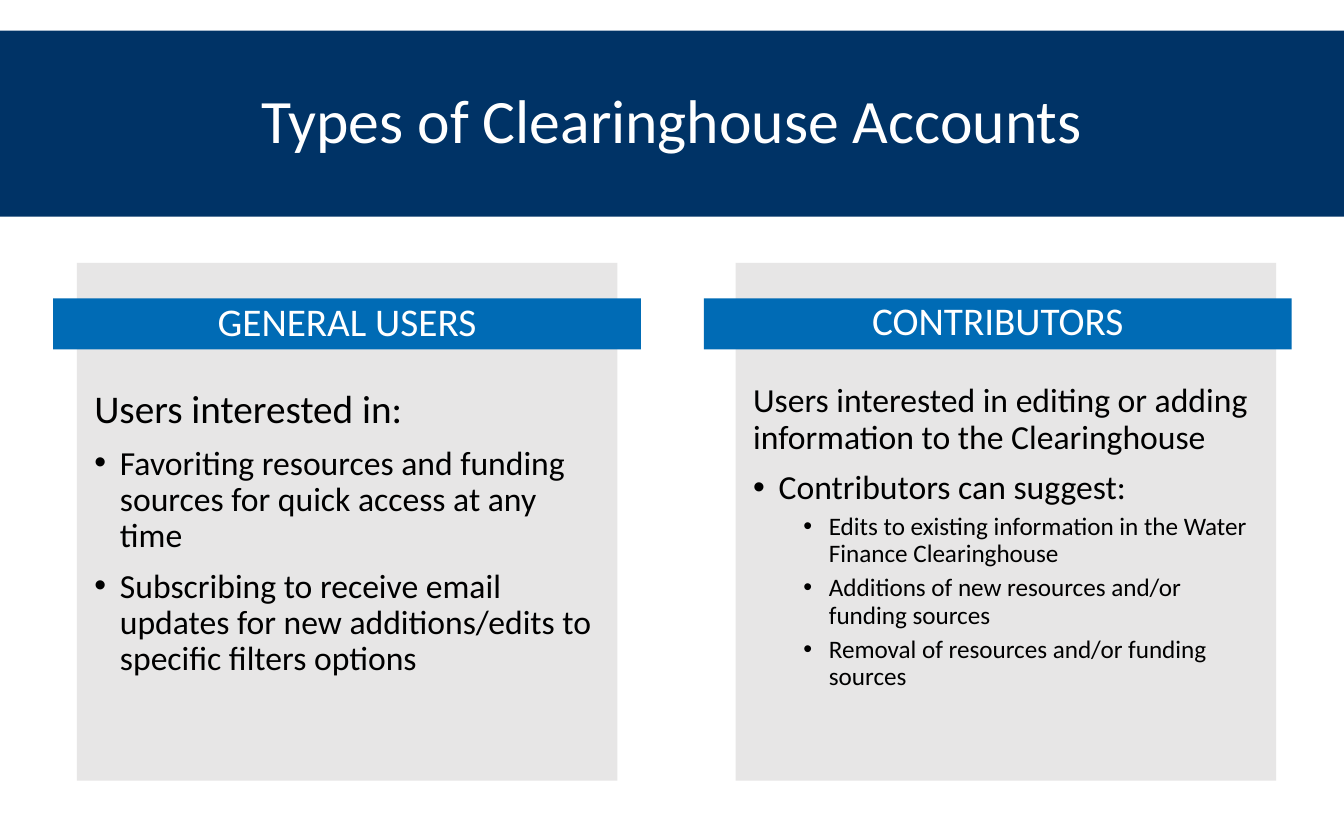
import pptx
import pptx.util
import pptx.dml.color
import pptx.enum.shapes
import pptx.enum.text
import lxml.etree

Inches = pptx.util.Inches
Pt = pptx.util.Pt
RGB = pptx.dml.color.RGBColor
ALIGN = pptx.enum.text.PP_ALIGN
ANCHOR = pptx.enum.text.MSO_ANCHOR

NAVY = RGB(0x00, 0x33, 0x66)
BLUE = RGB(0x00, 0x6B, 0xB5)
GREY = RGB(0xE7, 0xE6, 0xE6)
WHITE = RGB(0xFF, 0xFF, 0xFF)
BLACK = RGB(0x00, 0x00, 0x00)
FONT = "Calibri"
LARGE, MEDIUM, SMALL = 28.7, 24.6, 18.4
HANG = 0.26

USERS = [
    ("Users interested in:", LARGE, None),
    ("Favoriting resources and funding sources for quick access at any time", MEDIUM, 0),
    ("Subscribing to receive email updates for new additions/edits to specific filters options",
     MEDIUM, 0),
]
EDITORS = [
    ("Users interested in editing or adding information to the Clearinghouse", MEDIUM, None),
    ("Contributors can suggest:", MEDIUM, 0),
    ("Edits to existing information in the Water Finance Clearinghouse", SMALL, 1),
    ("Additions of new resources and/or funding sources", SMALL, 1),
    ("Removal of resources and/or funding sources", SMALL, 1),
]


def style(para, size, color, spacing=0.9):
    para.line_spacing = spacing
    for run in para.runs:
        run.font.name = FONT
        run.font.size = Pt(size)
        run.font.color.rgb = color


def label(shape, text, size, spacing=0.9):
    frame = shape.text_frame
    frame.text = text
    frame.word_wrap = True
    frame.auto_size = pptx.enum.text.MSO_AUTO_SIZE.NONE
    frame.vertical_anchor = ANCHOR.MIDDLE
    para = frame.paragraphs[0]
    para.alignment = ALIGN.CENTER
    style(para, size, WHITE, spacing)


def add_title(slide, text):
    title = slide.shapes.title
    title.left, title.top = Inches(0), Inches(0.31)
    title.width, title.height = Inches(13.65), Inches(1.89)
    title.fill.solid()
    title.fill.fore_color.rgb = NAVY
    label(title, text, 45.1)


def add_box(slide, left, top, width, height, color):
    box = slide.shapes.add_shape(
        pptx.enum.shapes.MSO_SHAPE.RECTANGLE,
        Inches(left), Inches(top), Inches(width), Inches(height))
    box.shadow.inherit = False
    box.fill.solid()
    box.fill.fore_color.rgb = color
    box.line.fill.background()
    return box


def add_bullet(para, level):
    para.level = level
    props = para._p.get_or_add_pPr()
    props.set("marL", str(Inches(HANG + 0.51 * level)))
    props.set("indent", str(-Inches(HANG)))
    space = pptx.oxml.ns.qn
    lxml.etree.SubElement(props, space("a:buFont")).set("typeface", "Arial")
    lxml.etree.SubElement(props, space("a:buChar")).set("char", "•")


def add_list(slide, left, top, height, items):
    box = slide.shapes.add_textbox(Inches(left), Inches(top), Inches(5.32), Inches(height))
    frame = box.text_frame
    frame.word_wrap = True
    for index, (text, size, level) in enumerate(items):
        para = frame.add_paragraph() if index else frame.paragraphs[0]
        para.text = text
        if level is not None:
            add_bullet(para, level)
        if index:
            para.space_before = Pt(5.1 if level else 10.2)
        style(para, size, BLACK)


def add_card(slide, left, bar, heading, spacing):
    add_box(slide, left, 2.67, 5.49, 5.26, GREY)
    label(add_box(slide, bar, 3.03, 5.97, 0.52, BLUE), heading, LARGE, spacing)


def main():
    deck = pptx.Presentation()
    deck.slide_width, deck.slide_height = Inches(13.65), Inches(8.36)
    slide = deck.slides.add_slide(deck.slide_layouts.get_by_name("Title Only"))
    add_title(slide, "Types of Clearinghouse Accounts")
    add_card(slide, 0.78, 0.54, "GENERAL USERS", 0.9)
    add_list(slide, 0.86, 3.91, 2.41, USERS)
    add_card(slide, 7.47, 7.15, "CONTRIBUTORS", 0.8)
    add_list(slide, 7.55, 3.85, 3.91, EDITORS)
    deck.save("out.pptx")


if __name__ == "__main__":
    main()
